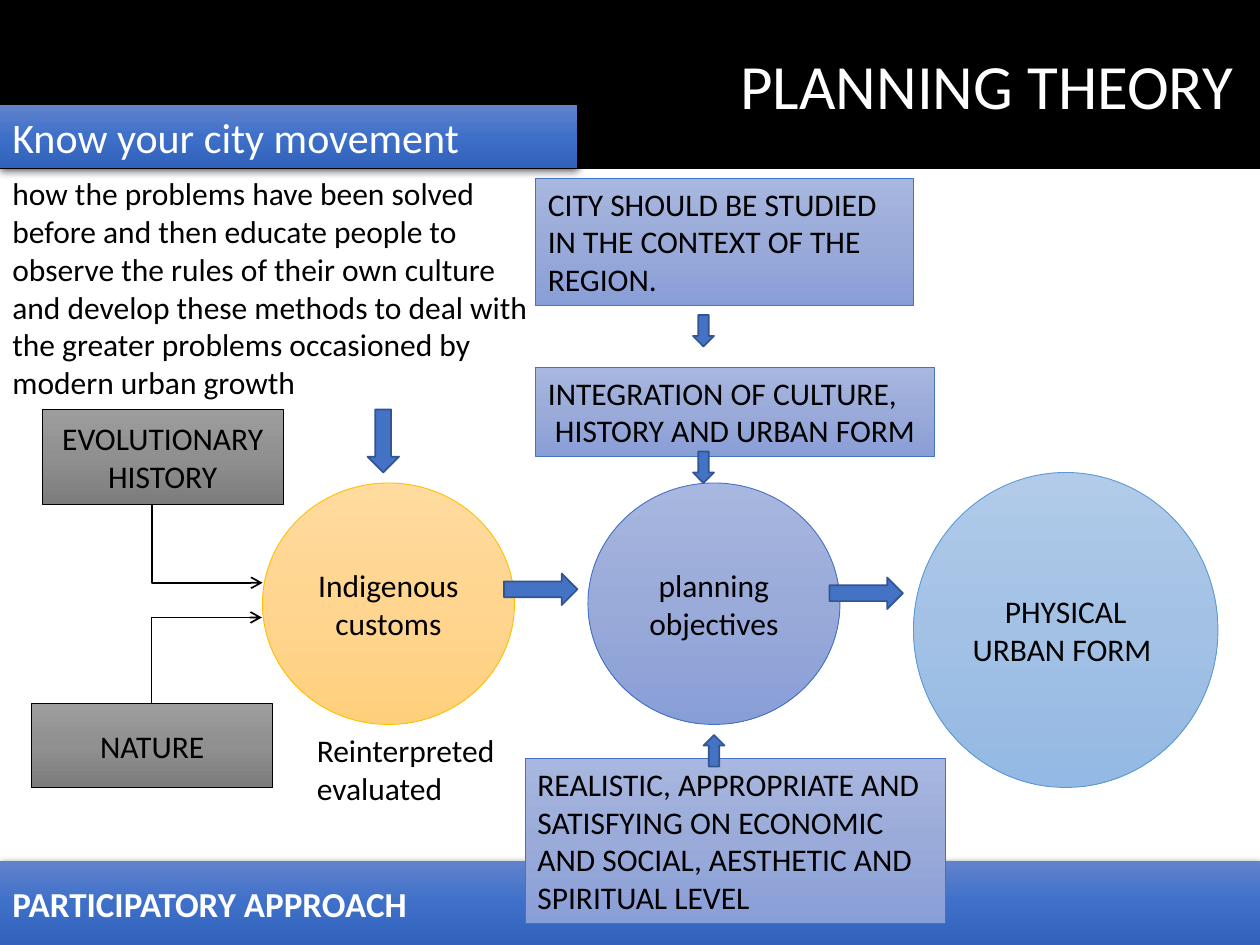
from copy import deepcopy

from lxml.etree import SubElement
from pptx import Presentation
from pptx.dml.color import RGBColor
from pptx.enum.shapes import MSO_CONNECTOR, MSO_SHAPE
from pptx.enum.text import MSO_ANCHOR, MSO_AUTO_SIZE, PP_ALIGN
from pptx.oxml.ns import qn
from pptx.util import Emu, Pt

PX = 9525  # 96 px to the inch
BLACK = RGBColor(0x00, 0x00, 0x00)
WHITE = RGBColor(0xFF, 0xFF, 0xFF)
BLUE = RGBColor(0x44, 0x72, 0xC4)
DARK_BLUE = RGBColor(0x32, 0x54, 0x91)
GOLD = RGBColor(0xFF, 0xC0, 0x00)
SKY = RGBColor(0x5B, 0x9B, 0xD5)
BAND_STOPS = (RGBColor(0x61, 0x83, 0xCB), RGBColor(0x3E, 0x70, 0xCA), RGBColor(0x30, 0x62, 0xBB))
GOLD_STOPS = (RGBColor(0xFF, 0xDB, 0x9E), RGBColor(0xFF, 0xD5, 0x90), RGBColor(0xFF, 0xD0, 0x7C))
SKY_STOPS = (RGBColor(0xB1, 0xCB, 0xE9), RGBColor(0xA3, 0xC1, 0xE5), RGBColor(0x93, 0xB9, 0xE4))
BLUE_STOPS = (RGBColor(0xA8, 0xB7, 0xDF), RGBColor(0x9A, 0xAB, 0xD9), RGBColor(0x88, 0x9E, 0xD7))
GREY_STOPS = (RGBColor(0x9D, 0x9D, 0x9D), RGBColor(0x90, 0x90, 0x90), RGBColor(0x7C, 0x7C, 0x7C))


def write(box, text, align=PP_ALIGN.LEFT, anchor=MSO_ANCHOR.TOP, size=18, color=BLACK, bold=False, wrap=True):
    frame = box.text_frame
    frame.text = text
    frame_format = {"word_wrap": wrap, "vertical_anchor": anchor, "auto_size": MSO_AUTO_SIZE.NONE}
    for name, value in frame_format.items():
        setattr(frame, name, value)
    for para in frame.paragraphs:
        para.alignment = align
        para.line_spacing = 1.0
        for span in para.runs:
            for name, value in {"name": "Calibri", "size": Pt(size), "bold": bold}.items():
                setattr(span.font, name, value)
            span.font.color.rgb = color


def fill_gradient(shape, colors):
    """Fill from top to bottom with three evenly spaced colours."""
    shape.fill.gradient()
    shape.fill.gradient_angle = 270
    stops = shape._element.spPr.find(".//" + qn("a:gsLst"))
    stops.insert(1, deepcopy(stops[0]))
    for stop, position, color in zip(shape.fill.gradient_stops, (0, 0.5, 1), colors):
        stop.position = position
        stop.color.rgb = color


deck = Presentation()
deck.slide_width, deck.slide_height = Emu(960 * PX), Emu(720 * PX)
page = deck.slides.add_slide(deck.slide_layouts[5])

title = page.shapes.title
for name, value in {"left": 0, "top": 0, "width": 960, "height": 128}.items():
    setattr(title, name, Emu(value * PX))
title.fill.solid()
title.fill.fore_color.rgb = BLACK
title.line.color.rgb = BLACK
title.line.width = Pt(1)
write(title, "PLANNING THEORY ", PP_ALIGN.RIGHT, MSO_ANCHOR.MIDDLE, 36, WHITE)

# Shaded bands
bands = [
    ((0, 656, 960, 64), "PARTICIPATORY APPROACH", {"anchor": MSO_ANCHOR.MIDDLE, "size": 20, "bold": True}),
    ((0, 80, 440, 48), "Know your city movement", {"size": 24}),
]
for place, text, text_format in bands:
    band = page.shapes.add_shape(MSO_SHAPE.RECTANGLE, *[Emu(n * PX) for n in place])
    fill_gradient(band, BAND_STOPS)
    band.line.fill.background()
    band.shadow.inherit = False
    effects = band._element.spPr.find(qn("a:effectLst"))
    shadow = SubElement(effects, qn("a:outerShdw"), blurRad="57150", dist="19050", dir="5400000",
                        algn="ctr", rotWithShape="0")
    shadow_color = SubElement(shadow, qn("a:srgbClr"), val="000000")
    SubElement(shadow_color, qn("a:alpha"), val="63000")
    write(band, text, color=WHITE, **text_format)

# Elbows run vertically from a source box, then right into the customs circle
elbows = [
    (116, 368, 200, 444, {"rot": "16200000", "flipH": "1"}),
    (116, 536, 200, 471, {"rot": "5400000", "flipH": "1", "flipV": "1"}),
]
for start_x, start_y, end_x, end_y, turn in elbows:
    width, height = abs(end_y - start_y), end_x - start_x  # before the quarter turn
    left = (start_x + end_x - width) // 2
    top = (start_y + end_y - height) // 2
    corners = (left, top, left + width, top + height)
    elbow = page.shapes.add_connector(MSO_CONNECTOR.ELBOW, *[Emu(n * PX) for n in corners])
    properties = elbow._element.spPr
    for name, value in turn.items():
        properties.find(qn("a:xfrm")).set(name, value)
    properties.find(qn("a:prstGeom")).set("prst", "bentConnector2")
    elbow.line.color.rgb = BLACK
    elbow.line.width = Pt(1)
    SubElement(properties.find(qn("a:ln")), qn("a:tailEnd"), type="arrow")
    SubElement(properties, qn("a:effectLst"))

CENTERED = {"align": PP_ALIGN.CENTER, "anchor": MSO_ANCHOR.MIDDLE}
RECTANGLE, OVAL = MSO_SHAPE.RECTANGLE, MSO_SHAPE.OVAL
panels = [
    (OVAL, (200, 368, 192, 184), GOLD_STOPS, GOLD, "Indigenous customs", CENTERED),
    (OVAL, (696, 360, 232, 240), SKY_STOPS, SKY, "PHYSICAL URBAN FORM ", CENTERED),
    (RECTANGLE, (408, 136, 288, 97), BLUE_STOPS, BLUE,
     "CITY SHOULD BE STUDIED IN THE CONTEXT OF THE REGION.", {}),
    (RECTANGLE, (24, 536, 184, 64), GREY_STOPS, BLACK, "NATURE", CENTERED),
    (RECTANGLE, (32, 312, 184, 72), GREY_STOPS, BLACK, "EVOLUTIONARY HISTORY", CENTERED),
    (RECTANGLE, (408, 280, 304, 68), BLUE_STOPS, BLUE,
     "INTEGRATION OF CULTURE,\n HISTORY AND URBAN FORM", {}),
    (OVAL, (448, 368, 192, 184), BLUE_STOPS, BLUE, "planning objectives", CENTERED),
    (RECTANGLE, (400, 578, 320, 126), BLUE_STOPS, BLUE,
     "REALISTIC, APPROPRIATE AND SATISFYING ON ECONOMIC AND SOCIAL, AESTHETIC AND SPIRITUAL LEVEL", {}),
]
for kind, place, colors, outline, text, text_format in panels:
    panel = page.shapes.add_shape(kind, *[Emu(n * PX) for n in place])
    panel.shadow.inherit = False
    fill_gradient(panel, colors)
    panel.line.color.rgb = outline
    panel.line.width = Pt(0.5)
    write(panel, text, **text_format)

notes = [
    ((0, 128, 416, 184), "how the problems have been solved before and then educate people to observe "
     "the rules of their own culture and develop these methods to deal with the greater problems "
     "occasioned by modern urban growth", True),
    ((232, 552, 162, 68), "Reinterpreted\nevaluated", False),
]
for place, text, wrap in notes:
    note = page.shapes.add_textbox(*[Emu(n * PX) for n in place])
    write(note, text, wrap=wrap)

block_arrows = [
    (MSO_SHAPE.RIGHT_ARROW, (384, 437, 56, 24)),
    (MSO_SHAPE.RIGHT_ARROW, (632, 440, 56, 24)),
    (MSO_SHAPE.DOWN_ARROW, (528, 344, 16, 24)),
    (MSO_SHAPE.UP_ARROW, (536, 560, 16, 24)),
    (MSO_SHAPE.DOWN_ARROW, (280, 312, 24, 48)),
    (MSO_SHAPE.DOWN_ARROW, (528, 240, 16, 24)),
]
for kind, place in block_arrows:
    arrow = page.shapes.add_shape(kind, *[Emu(n * PX) for n in place])
    arrow.shadow.inherit = False
    arrow.fill.solid()
    arrow.fill.fore_color.rgb = BLUE
    arrow.line.color.rgb = DARK_BLUE
    arrow.line.width = Pt(1)

deck.save("out.pptx")
